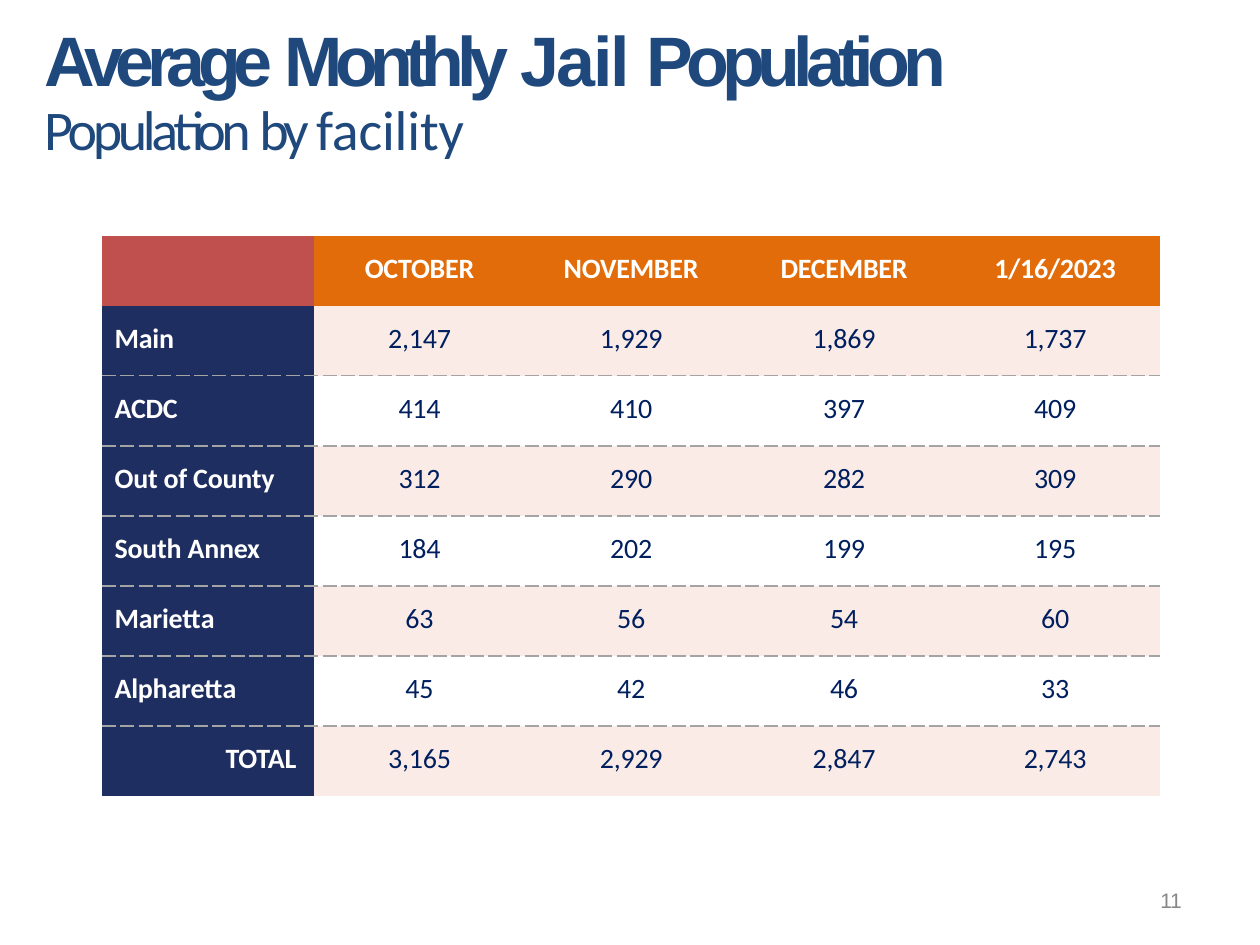
import pptx
import pptx.dml.color
import pptx.enum.text
import pptx.oxml
import pptx.oxml.ns
import pptx.util

RGBColor = pptx.dml.color.RGBColor
Inches = pptx.util.Inches
ALIGN = pptx.enum.text.PP_ALIGN

TITLE_BLUE = RGBColor(0x1F, 0x48, 0x7C)
CORNER_RED = RGBColor(0xC0, 0x50, 0x4D)
HEADER_ORANGE = RGBColor(0xE2, 0x6C, 0x09)
LABEL_NAVY = RGBColor(0x1F, 0x2E, 0x60)
VALUE_NAVY = RGBColor(0x00, 0x1F, 0x5F)
BAND_PINK = RGBColor(0xFB, 0xEB, 0xE7)
WHITE = RGBColor(0xFF, 0xFF, 0xFF)
RULE_GREY = RGBColor(0xA4, 0xA4, 0xA4)
NUMBER_GREY = RGBColor(0x87, 0x87, 0x87)

COLUMN_WIDTHS = [1.68, 1.63, 1.74, 1.68, 1.67]
COLUMN_INDENTS = [0.1, 0.05, 0.04, 0, 0]
TABLE_HEIGHT = 4.45
ROWS = [
    ["", "OCTOBER", "NOVEMBER", "DECEMBER", "1/16/2023"],
    ["Main", "2,147", "1,929", "1,869", "1,737"],
    ["ACDC", "414", "410", "397", "409"],
    ["Out of County", "312", "290", "282", "309"],
    ["South Annex", "184", "202", "199", "195"],
    ["Marietta", "63", "56", "54", "60"],
    ["Alpharetta", "45", "42", "46", "33"],
    ["TOTAL", "3,165", "2,929", "2,847", "2,743"],
]


def write(para, spans, size=16, font="Calibri", color=WHITE, bold=False,
          align=ALIGN.LEFT, indent=0, leading=None):
    """Fill a paragraph with (text, letter spacing) spans in one format."""
    para.alignment = align
    para._p.get_or_add_pPr().set("marL", str(Inches(indent)))
    para._p.get_or_add_pPr().set("indent", "0")
    if leading:
        para.line_spacing = pptx.util.Pt(leading)
    for text, spacing in spans:
        span = para.add_run()
        span.text = text
        span.font.size = pptx.util.Pt(size)
        span.font.name = font
        span.font.bold = bold
        span.font.color.rgb = color
        span._r.get_or_add_rPr().set("spc", str(round(spacing * 100)))


def set_frame(frame, top):
    """Give a text frame its insets and top anchor."""
    frame.word_wrap = True
    frame.auto_size = pptx.enum.text.MSO_AUTO_SIZE.SHAPE_TO_FIT_TEXT
    frame.vertical_anchor = pptx.enum.text.MSO_ANCHOR.TOP
    frame.margin_left = frame.margin_right = frame.margin_bottom = 0
    frame.margin_top = Inches(top)


def set_borders(cell, ruled):
    """Draw dashed rules on the named edges and clear the others."""
    for edge in ("lnL", "lnR", "lnT", "lnB"):
        paint = "<a:noFill/>"
        if edge in ruled:
            paint = (f'<a:solidFill><a:srgbClr val="{RULE_GREY}"/></a:solidFill>'
                     '<a:prstDash val="sysDash"/>')
        cell._tc.get_or_add_tcPr().append(pptx.oxml.parse_xml(
            f'<a:{edge} {pptx.oxml.ns.nsdecls("a")} w="12700">{paint}</a:{edge}>'))


def cell_fill(row, column):
    """Return the fill colour for a table position."""
    if row == 0:
        return HEADER_ORANGE if column else CORNER_RED
    if column == 0:
        return LABEL_NAVY
    return BAND_PINK if row % 2 else WHITE


def add_title(page):
    """Place the heading and subheading in the title placeholder."""
    title = page.shapes.title
    title.left, title.top = Inches(0.06), Inches(0.02)
    title.width, title.height = Inches(8.75), Inches(1.27)
    frame = title.text_frame
    set_frame(frame, 0.16)
    write(frame.paragraphs[0],
          [("Average ", -4.3), ("Monthly ", -4.2), ("Jail ", -1.4), ("Population", -3.9)],
          size=40, font="Arial", color=TITLE_BLUE, bold=True, indent=0.29, leading=44.4)
    write(frame.add_paragraph(),
          [("Population ", -2.5), ("by ", -3), ("facility", -0.1)],
          size=32, color=TITLE_BLUE, indent=0.29, leading=34.8)


def add_population_table(page):
    """Add the table of jail population by facility and month."""
    table = page.shapes.add_table(
        len(ROWS), len(COLUMN_WIDTHS), Inches(0.81), Inches(1.87),
        Inches(sum(COLUMN_WIDTHS)), Inches(TABLE_HEIGHT)).table
    table.first_row = table.horz_banding = False
    for column, width in zip(table.columns, COLUMN_WIDTHS):
        column.width = Inches(width)
    last = len(ROWS) - 1
    for r, values in enumerate(ROWS):
        table.rows[r].height = Inches(TABLE_HEIGHT / len(ROWS))
        ruled = (["lnT"] if r > 1 else []) + (["lnB"] if 0 < r < last else [])
        for c, value in enumerate(values):
            cell = table.cell(r, c)
            cell.margin_left = cell.margin_right = cell.margin_bottom = 0
            cell.margin_top = Inches(0.13)
            set_borders(cell, ruled)
            cell.fill.solid()
            cell.fill.fore_color.rgb = cell_fill(r, c)
            is_value = r > 0 and c > 0
            if value:
                write(cell.text_frame.paragraphs[0], [(value, -0.1)],
                      color=VALUE_NAVY if is_value else WHITE, bold=not is_value,
                      align=ALIGN.CENTER if c else ALIGN.LEFT,
                      indent=0.98 if value == "TOTAL" else COLUMN_INDENTS[c])


def add_page_number(page, number):
    """Add the page number at the lower right."""
    box = page.shapes.add_textbox(Inches(9.17), Inches(6.88), Inches(0.33), Inches(0.38))
    set_frame(box.text_frame, 0.17)
    write(box.text_frame.paragraphs[0], [(number, -0.2)], size=12, font="Arial",
          color=NUMBER_GREY, indent=0.04, leading=14.2)


def main():
    """Build the slide and save the deck."""
    deck = pptx.Presentation()
    deck.slide_width, deck.slide_height = Inches(10), Inches(7.5)
    page = deck.slides.add_slide(deck.slide_layouts[5])
    add_title(page)
    add_population_table(page)
    add_page_number(page, "11")
    deck.save("out.pptx")


if __name__ == "__main__":
    main()
